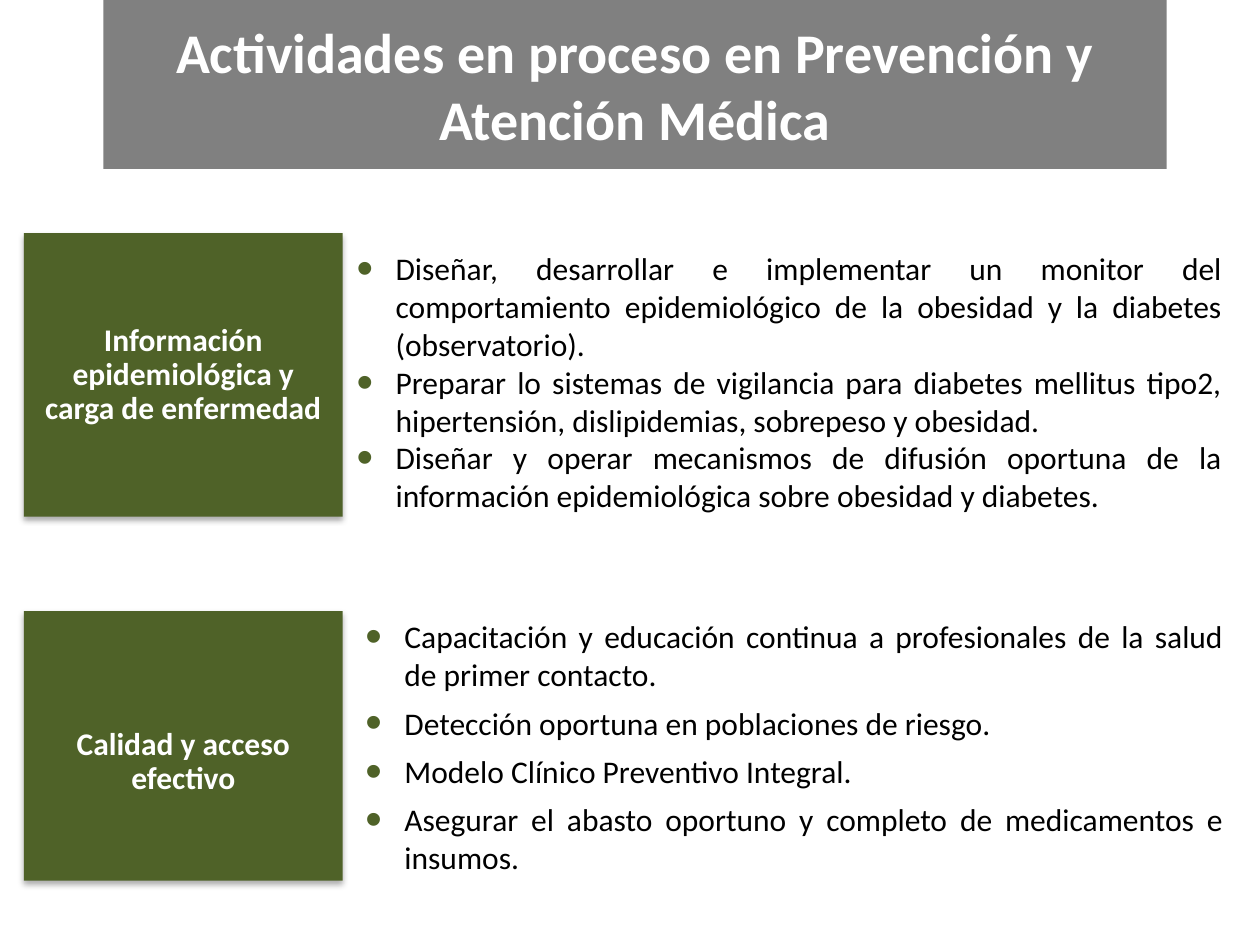
"""Build the slide of ongoing activities in prevention and medical care."""
from dataclasses import dataclass

from lxml import etree
from pptx import Presentation
from pptx.dml.color import RGBColor
from pptx.enum.shapes import MSO_SHAPE
from pptx.enum.text import MSO_ANCHOR, MSO_AUTO_SIZE, PP_ALIGN
from pptx.oxml.ns import qn
from pptx.util import Inches, Pt

RECTANGLE = MSO_SHAPE.RECTANGLE
TOP, MIDDLE = MSO_ANCHOR.TOP, MSO_ANCHOR.MIDDLE
CENTER, JUSTIFY = PP_ALIGN.CENTER, PP_ALIGN.JUSTIFY
FIXED_SIZE = MSO_AUTO_SIZE.NONE
GRAY = RGBColor(0x80, 0x80, 0x80)
GREEN = RGBColor(0x4F, 0x62, 0x28)
WHITE = RGBColor(0xFF, 0xFF, 0xFF)
BLACK = RGBColor(0x00, 0x00, 0x00)
FONT = "Calibri"
SLIDE_WIDTH, SLIDE_HEIGHT = Inches(10), Inches(7.5)
TWO_CONTENT_LAYOUT = 3
INDENT = Inches(0.31)
INSET = Inches(0.05)


@dataclass(frozen=True)
class Area:
    """Place on the slide, in percent of its width and height."""

    left: float
    top: float
    width: float
    height: float

    def lengths(self) -> tuple[int, int, int, int]:
        """Return left, top, width and height in slide units."""
        return (
            int(SLIDE_WIDTH * self.left / 100),
            int(SLIDE_HEIGHT * self.top / 100),
            int(SLIDE_WIDTH * self.width / 100),
            int(SLIDE_HEIGHT * self.height / 100),
        )


@dataclass(frozen=True)
class Topic:
    """Heading block with its list of activities."""

    heading: str
    heading_area: Area
    activities: tuple[str, ...]
    activities_area: Area
    space_before: int = 0
    heading_drop: float = 0


TITLE = "Actividades en proceso en Prevención y Atención Médica"
TITLE_AREA = Area(8.2, 0, 84.4, 17.87)
TOPICS = (
    Topic(
        "Información epidemiológica y carga de enfermedad",
        Area(1.9, 24.67, 25.3, 30),
        (
            "Diseñar, desarrollar e implementar un monitor del comportamiento "
            "epidemiológico de la obesidad y la diabetes (observatorio).",
            "Preparar lo sistemas de vigilancia para diabetes mellitus tipo2, "
            "hipertensión, dislipidemias, sobrepeso y obesidad.",
            "Diseñar y operar mecanismos de difusión oportuna de la información "
            "epidemiológica sobre obesidad y diabetes.",
        ),
        Area(27.3, 25.73, 70.7, 33.6),
    ),
    Topic(
        "Calidad y acceso efectivo",
        Area(1.9, 64.67, 25.3, 28.53),
        (
            "Capacitación y educación continua a profesionales de la salud "
            "de primer contacto.",
            "Detección oportuna en poblaciones de riesgo.",
            "Modelo Clínico Preventivo Integral.",
            "Asegurar el abasto oportuno y completo de medicamentos e insumos.",
        ),
        Area(28, 64.67, 70.1, 28.93),
        space_before=6,
        heading_drop=0.26,
    ),
)


def place(box, area: Area) -> None:
    """Move a shape or placeholder to an area."""
    box.left, box.top, box.width, box.height = area.lengths()


def write(frame, *paragraphs: str, size=18, color=BLACK, bold=False, align=CENTER,
          anchor=MIDDLE, line_spacing=1.0, space_before=0, bulleted=False) -> None:
    """Fill a text frame with formatted paragraphs."""
    frame.word_wrap = True
    frame.auto_size = FIXED_SIZE
    frame.vertical_anchor = anchor
    for index, text in enumerate(paragraphs):
        paragraph = frame.add_paragraph() if index else frame.paragraphs[0]
        paragraph.alignment = align
        paragraph.line_spacing = line_spacing
        paragraph.space_before = Pt(space_before)
        run = paragraph.add_run()
        run.text = text
        run.font.name = FONT
        run.font.size = Pt(size)
        run.font.bold = bold
        run.font.color.rgb = color
        if bulleted:
            add_bullet(paragraph)


def add_bullet(paragraph) -> None:
    """Give a paragraph a hanging green bullet."""
    properties = paragraph._p.get_or_add_pPr()
    properties.set("marL", str(INDENT))
    properties.set("indent", str(-INDENT))
    bullet_color = etree.SubElement(properties, qn("a:buClr"))
    etree.SubElement(bullet_color, qn("a:srgbClr"), val=str(GREEN))
    etree.SubElement(properties, qn("a:buSzPct"), val="150000")
    etree.SubElement(properties, qn("a:buFont"), typeface="Arial")
    etree.SubElement(properties, qn("a:buChar"), char="•")


def add_soft_shadow(block) -> None:
    """Cast a soft shadow below a block."""
    block.shadow.inherit = False
    effects = block._element.spPr.find(qn("a:effectLst"))
    shadow = etree.SubElement(effects, qn("a:outerShdw"), blurRad=str(Pt(3.5)),
                              dist=str(Pt(2.2)), dir="5400000", rotWithShape="0")
    shade = etree.SubElement(shadow, qn("a:srgbClr"), val=str(BLACK))
    etree.SubElement(shade, qn("a:alpha"), val="32000")


def draw_topic(slide, topic: Topic, activity_list) -> None:
    """Draw a heading block and fill its list placeholder."""
    block = slide.shapes.add_shape(RECTANGLE, *topic.heading_area.lengths())
    block.fill.solid()
    block.fill.fore_color.rgb = GREEN
    block.line.fill.background()
    add_soft_shadow(block)
    block.text_frame.margin_top = INSET + Inches(topic.heading_drop)
    write(block.text_frame, topic.heading, color=WHITE, bold=True, line_spacing=0.9)
    place(activity_list, topic.activities_area)
    write(activity_list.text_frame, *topic.activities, align=JUSTIFY, anchor=TOP,
          space_before=topic.space_before, bulleted=True)


def main() -> None:
    """Build and save the presentation."""
    presentation = Presentation()
    presentation.slide_width, presentation.slide_height = SLIDE_WIDTH, SLIDE_HEIGHT
    slide = presentation.slides.add_slide(presentation.slide_layouts[TWO_CONTENT_LAYOUT])
    title, *activity_lists = slide.placeholders
    place(title, TITLE_AREA)
    title.fill.solid()
    title.fill.fore_color.rgb = GRAY
    write(title.text_frame, TITLE, size=32, color=WHITE, bold=True)
    for topic, activity_list in zip(TOPICS, activity_lists):
        draw_topic(slide, topic, activity_list)
    presentation.save("out.pptx")


if __name__ == "__main__":
    main()
